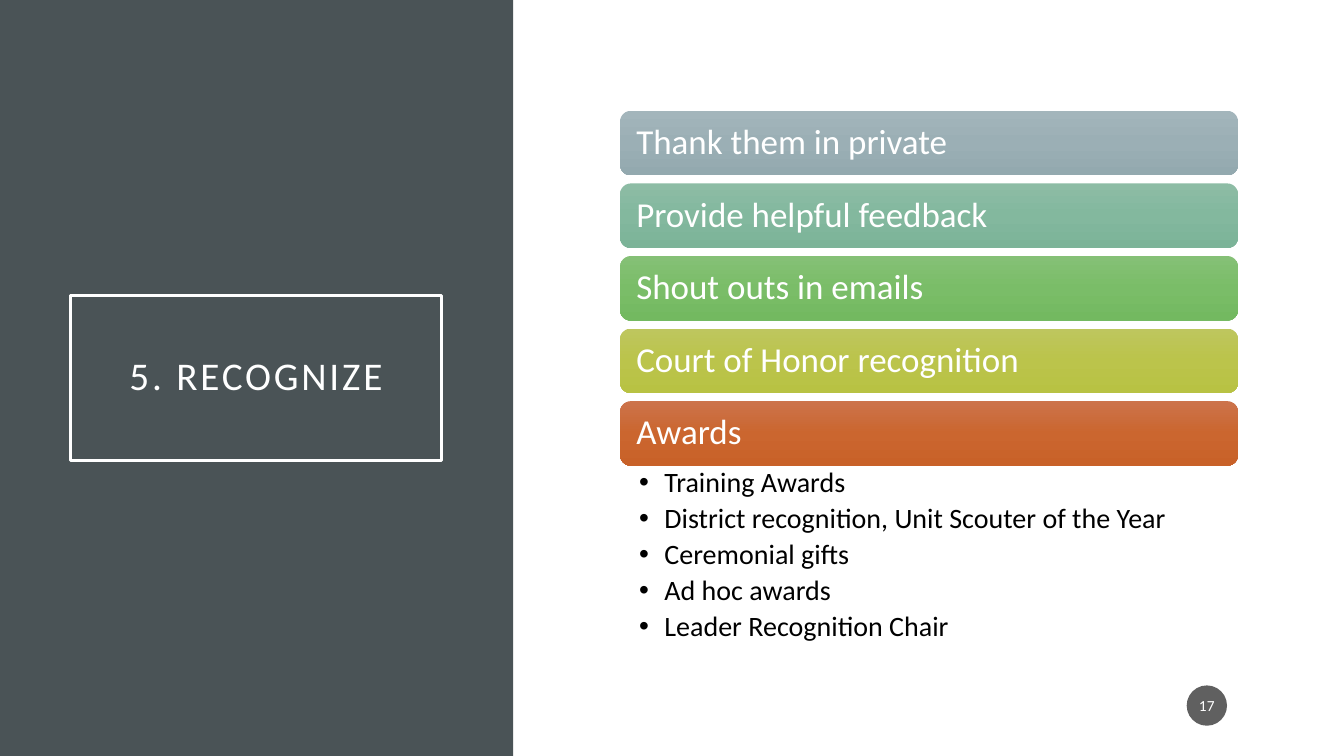
from copy import deepcopy
from dataclasses import dataclass

from lxml.etree import SubElement
from pptx import Presentation
from pptx.dml.color import RGBColor
from pptx.enum.shapes import MSO_SHAPE
from pptx.enum.text import MSO_ANCHOR, PP_ALIGN
from pptx.oxml.ns import qn
from pptx.util import Inches, Pt


@dataclass(frozen=True)
class Theme:
    font: str = "Calibri"
    panel: str = "4A5356"
    light: str = "FFFFFF"
    dark: str = "000000"
    badge: str = "1D1D1D"
    badge_alpha: int = 70
    title_size: int = 28
    bar_size: int = 25
    bullet_size: int = 20
    number_size: int = 11


THEME = Theme()

BARS = [
    ("Thank them in private", ("A3B5BB", "9BAFB5", "93A9AF")),
    ("Provide helpful feedback", ("8DBCA5", "83B89E", "7BB398")),
    ("Shout outs in emails", ("85C076", "7ABD68", "73B960")),
    ("Court of Honor recognition", ("BEC65E", "BBC44B", "B8C243")),
    ("Awards", ("CC734B", "CB662F", "C86128")),
]

AWARDS = [
    "Training Awards",
    "District recognition, Unit Scouter of the Year",
    "Ceremonial gifts",
    "Ad hoc awards",
    "Leader Recognition Chair",
]


def add_box(slide, kind, left, top, width, height):
    sp = slide.shapes.add_shape(
        kind, Inches(left), Inches(top), Inches(width), Inches(height)
    )
    sp.shadow.inherit = False
    sp.line.fill.background()
    return sp


def fill_solid(sp, color):
    sp.fill.solid()
    sp.fill.fore_color.rgb = RGBColor.from_string(color)


def fill_gradient(sp, colors):
    sp.fill.gradient()
    sp.fill.gradient_angle = 270
    stops = sp._element.spPr.find(".//" + qn("a:gsLst"))
    stops.append(deepcopy(stops[-1]))
    for i, (stop, color) in enumerate(zip(sp.fill.gradient_stops, colors)):
        stop.position = i / (len(colors) - 1)
        stop.color.rgb = RGBColor.from_string(color)


def set_frame(tf, anchor, inset_x, inset_y):
    tf.word_wrap = True
    tf.vertical_anchor = anchor
    tf.margin_left = tf.margin_right = Inches(inset_x)
    tf.margin_top = tf.margin_bottom = Inches(inset_y)


def add_text(p, text, size, color, align=PP_ALIGN.LEFT, spacing=0.9):
    p.alignment = align
    p.line_spacing = spacing
    r = p.add_run()
    r.text = text
    r.font.name = THEME.font
    r.font.size = Pt(size)
    r.font.color.rgb = RGBColor.from_string(color)
    return r


def add_bullet(p, indent):
    pPr = p._p.get_or_add_pPr()
    pPr.set("marL", str(Inches(indent)))
    pPr.set("indent", str(-Inches(indent)))
    SubElement(pPr, qn("a:buFont"), typeface="Arial")
    SubElement(pPr, qn("a:buChar"), char="•")


def add_title_panel(slide, left, top, width, height):
    panel = add_box(slide, MSO_SHAPE.RECTANGLE, left, top, width, height)
    fill_solid(panel, THEME.panel)
    frame_height = 1.64
    sp = add_box(
        slide, MSO_SHAPE.RECTANGLE,
        left + 0.7, top + (height - frame_height) / 2, 3.68, frame_height,
    )
    sp.fill.background()
    sp.line.color.rgb = RGBColor.from_string(THEME.light)
    sp.line.width = Pt(2.5)
    set_frame(sp.text_frame, MSO_ANCHOR.MIDDLE, 0.2, 0.2)
    r = add_text(
        sp.text_frame.paragraphs[0], "5. RECOGNIZE",
        THEME.title_size, THEME.light, PP_ALIGN.CENTER,
    )
    r.font._element.set("spc", "200")


def add_bars(slide, left, top, width, bar_height, pitch):
    for i, (text, colors) in enumerate(BARS):
        sp = add_box(
            slide, MSO_SHAPE.ROUNDED_RECTANGLE,
            left, top + i * pitch, width, bar_height,
        )
        fill_gradient(sp, colors)
        set_frame(sp.text_frame, MSO_ANCHOR.MIDDLE, 0.13, 0.1)
        add_text(sp.text_frame.paragraphs[0], text, THEME.bar_size, THEME.light)


def add_award_list(slide, left, top, width, height):
    tb = slide.shapes.add_textbox(
        Inches(left), Inches(top), Inches(width), Inches(height)
    )
    tf = tb.text_frame
    set_frame(tf, MSO_ANCHOR.TOP, 0.19, 0.03)
    for i, award in enumerate(AWARDS):
        p = tf.add_paragraph() if i else tf.paragraphs[0]
        add_text(p, award, THEME.bullet_size, THEME.dark)
        p.space_after = Pt(4)
        add_bullet(p, 0.25)


def add_page_number(slide, left, top, size):
    sp = add_box(slide, MSO_SHAPE.OVAL, left, top, size, size)
    fill_solid(sp, THEME.badge)
    color = sp._element.spPr.find(".//" + qn("a:srgbClr"))
    SubElement(color, qn("a:alpha"), val=str(THEME.badge_alpha * 1000))
    set_frame(sp.text_frame, MSO_ANCHOR.MIDDLE, 0.02, 0.05)
    add_text(
        sp.text_frame.paragraphs[0], "17",
        THEME.number_size, THEME.light, PP_ALIGN.CENTER, 1.0,
    )


def main():
    prs = Presentation()
    prs.slide_width = Inches(13.33)
    prs.slide_height = Inches(7.5)
    slide = prs.slides.add_slide(prs.slide_layouts[6])
    add_title_panel(slide, 0, 0, 5.09, 7.5)
    add_bars(slide, 6.15, 1.1, 6.13, 0.64, 0.72)
    add_award_list(slide, 6.15, 4.62, 6.13, 1.78)
    add_page_number(slide, 11.77, 6.8, 0.4)
    prs.save("out.pptx")


if __name__ == "__main__":
    main()
